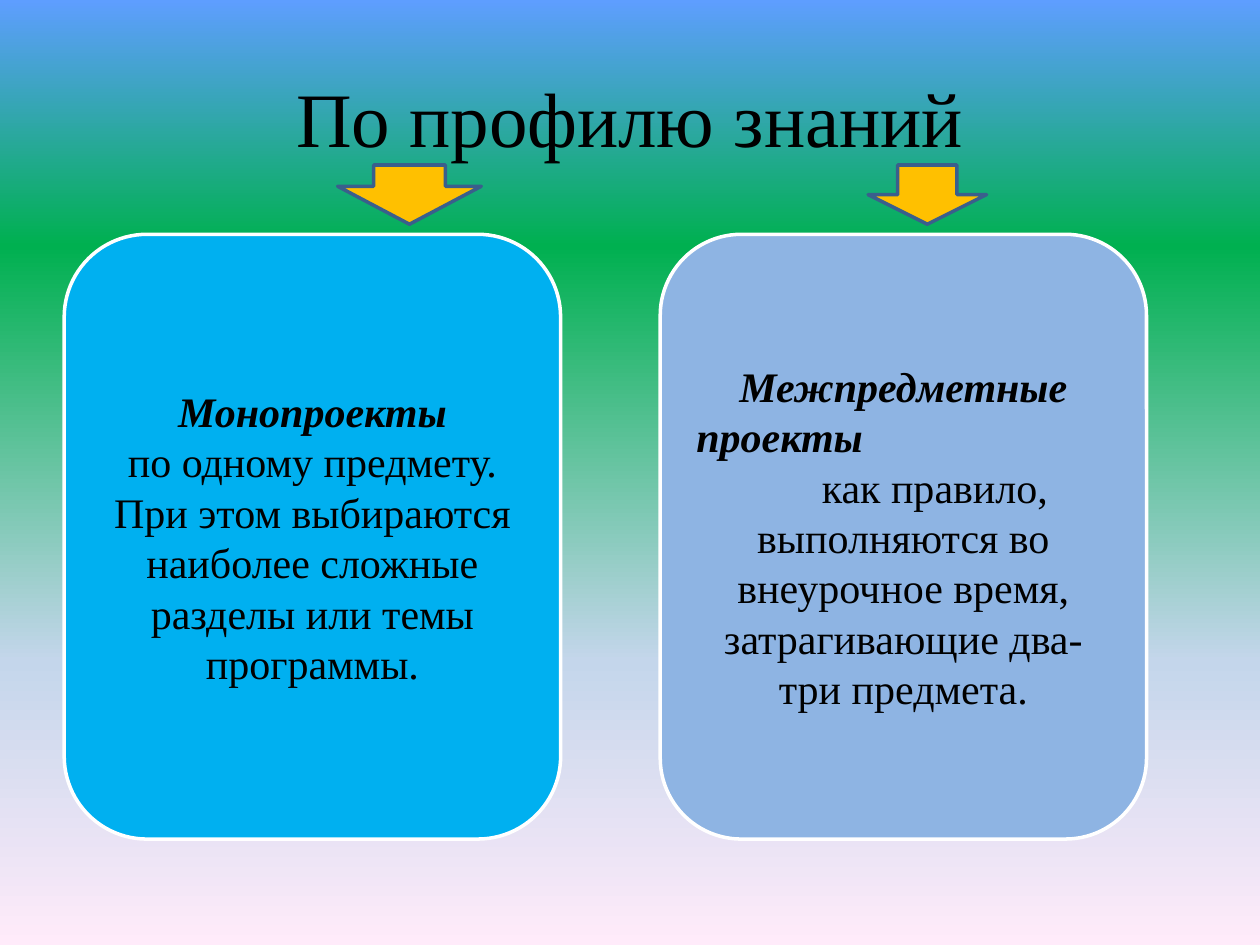
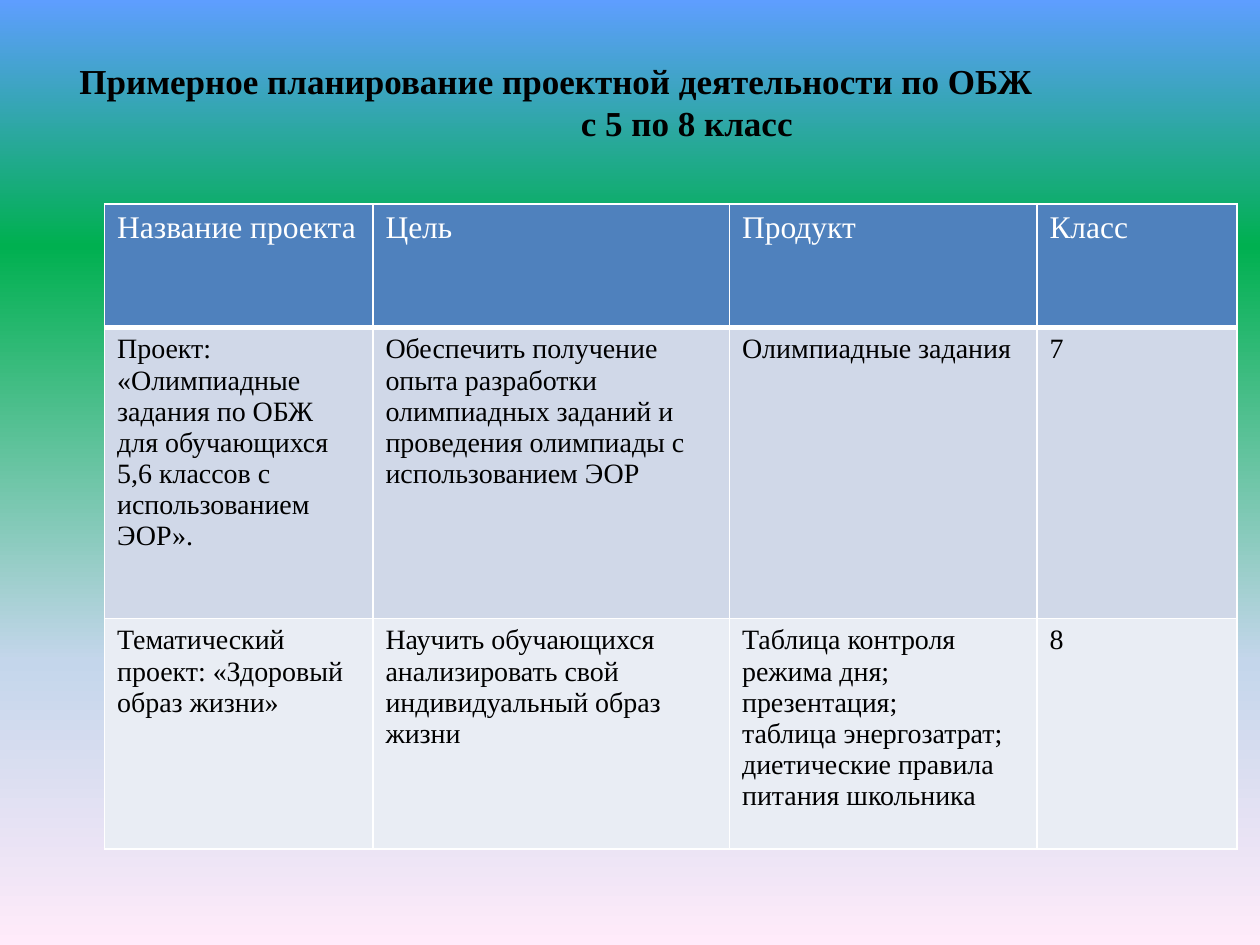
from dataclasses import dataclass

from lxml import etree
from pptx import Presentation
from pptx.dml.color import RGBColor
from pptx.enum.shapes import MSO_SHAPE
from pptx.enum.text import MSO_ANCHOR, PP_ALIGN
from pptx.oxml.ns import qn
from pptx.util import Inches, Pt

ROUND_RECT, DOWN_ARROW = MSO_SHAPE.ROUNDED_RECTANGLE, MSO_SHAPE.DOWN_ARROW
LEFT, CENTER = PP_ALIGN.LEFT, PP_ALIGN.CENTER
MIDDLE = MSO_ANCHOR.MIDDLE

# Shared look
FONT = "Times New Roman"
BLACK, WHITE = "000000", "FFFFFF"
ARROW_FILL, ARROW_LINE = "FFC000", "3A5F8C"
BACKDROP = [(0, "5E9EFF"), (26, "00B050"), (70, "C4D6EB"), (100, "FFEBFA")]
HEADER_FILL, ROW_FILLS = "4F81BD", ("D0D8E8", "E9EDF4")

# The slide is a grid of 100 columns by 75 rows
SLIDE_W, SLIDE_H = Inches(10), Inches(7.5)
COL, ROW = SLIDE_W / 100, SLIDE_H / 75


@dataclass
class Box:
    left: float
    top: float
    width: float
    height: float

    def emu(self) -> tuple:
        return (round(self.left * COL), round(self.top * ROW),
                round(self.width * COL), round(self.height * ROW))


@dataclass
class Para:
    text: str
    align: int = CENTER
    strong: bool = False
    margin: float = 0  # whole paragraph, in columns
    indent: float = 0  # first line, in columns


@dataclass
class Card:
    box: Box
    fill: str
    paras: list
    arrow: Box
    head: float


CARD_TOP, CARD_H = 18.6, 48
ARROW_TOP, ARROW_H = 13.1, 4.7

CARDS = [
    Card(Box(5.1, CARD_TOP, 39.4, CARD_H), "00B0F0",
         [Para("Монопроекты", strong=True),
          Para("по одному предмету. При этом выбираются наиболее сложные "
               "разделы или темы программы.")],
         Box(26.8, ARROW_TOP, 11.4, ARROW_H), 0.64),
    Card(Box(52.4, CARD_TOP, 38.6, CARD_H), "8EB4E3",
         [Para("Межпредметные", strong=True),
          Para("проекты", LEFT, strong=True),
          Para("как правило, выполняются во внеурочное время, "
               "затрагивающие два- три предмета.", indent=5)],
         Box(68.9, ARROW_TOP, 9.4, ARROW_H), 0.5),
]

TABLE_BOX = Box(8.3, 16.2, 89.9, 51.2)
COL_WIDTHS = (21.3, 28.3, 24.4, 15.9)
ROW_HEIGHTS = (9.8, 23.1, 18.3)
PLAN = [
    ("Название проекта", "Цель", "Продукт", "Класс"),
    ("Проект:\n«Олимпиадные задания по ОБЖ для обучающихся 5,6 классов "
     "с использованием ЭОР».",
     "Обеспечить получение опыта разработки олимпиадных заданий и "
     "проведения олимпиады с использованием ЭОР",
     "Олимпиадные задания", "7"),
    ("Тематический проект: «Здоровый образ жизни»",
     "Научить обучающихся анализировать свой индивидуальный образ жизни",
     "Таблица контроля режима дня; презентация;\n"
     "таблица энергозатрат; диетические правила питания школьника", "8"),
]


def rgb(color: str) -> RGBColor:
    return RGBColor.from_string(color)


def style_runs(p, size: float, color: str, bold=False, italic=False) -> None:
    for r in p.runs:
        r.font.name, r.font.size = FONT, Pt(size)
        r.font.bold, r.font.italic = bold, italic
        r.font.color.rgb = rgb(color)


def write(tf, paras: list, size: float, italic: bool = True) -> None:
    """Fill a frame with paragraphs; strong ones are bold."""
    tf.word_wrap, tf.vertical_anchor = True, MIDDLE
    tf.text = "\n".join(para.text for para in paras)
    for p, para in zip(tf.paragraphs, paras):
        p.alignment = para.align
        pPr = p._p.get_or_add_pPr()
        pPr.set("marL", str(round(para.margin * COL)))
        pPr.set("indent", str(round(para.indent * COL)))
        style_runs(p, size, BLACK, para.strong, para.strong and italic)


def set_backdrop(master) -> None:
    fill = master.background.fill
    fill.gradient()
    fill.gradient_angle = 270
    stops = next(master._element.iter(qn("a:gsLst")))
    for gs in list(stops):
        stops.remove(gs)
    for percent, color in BACKDROP:
        gs = etree.SubElement(stops, qn("a:gs"), pos=str(percent * 1000))
        etree.SubElement(gs, qn("a:srgbClr"), val=color)


def add_slide(prs, title: list, box: Box, size: float):
    s = prs.slides.add_slide(prs.slide_layouts.get_by_name("Title Only"))
    sp = s.shapes.title
    sp.left, sp.top, sp.width, sp.height = box.emu()
    write(sp.text_frame, title, size, italic=False)
    return s


def add_shape(s, kind: int, box: Box, fill: str, line: str):
    sp = s.shapes.add_shape(kind, *box.emu())
    sp.shadow.inherit = False
    sp.fill.solid()
    sp.fill.fore_color.rgb = rgb(fill)
    sp.line.color.rgb = rgb(line)
    sp.line.width = Pt(2)
    return sp


def add_card(s, card: Card) -> None:
    sp = add_shape(s, ROUND_RECT, card.box, card.fill, WHITE)
    write(sp.text_frame, card.paras, 24)
    arrow = add_shape(s, DOWN_ARROW, card.arrow, ARROW_FILL, ARROW_LINE)
    arrow.adjustments[1] = card.head


def set_borders(cell, top: float, bottom: float) -> None:
    tcPr = cell._tc.get_or_add_tcPr()
    for side, width in (("L", 1), ("R", 1), ("T", top), ("B", bottom)):
        ln = etree.SubElement(tcPr, qn(f"a:ln{side}"), w=str(Pt(width)))
        fill = etree.SubElement(ln, qn("a:solidFill"))
        etree.SubElement(fill, qn("a:srgbClr"), val=WHITE)


def add_plan(s) -> None:
    table = s.shapes.add_table(len(PLAN), len(PLAN[0]), *TABLE_BOX.emu()).table
    for column, width in zip(table.columns, COL_WIDTHS):
        column.width = round(width * COL)
    for i, (row, height) in enumerate(zip(table.rows, ROW_HEIGHTS)):
        row.height = round(height * ROW)
        header = i == 0
        for cell, text in zip(row.cells, PLAN[i]):
            set_borders(cell, 3 if i == 1 else 1, 3 if header else 1)
            cell.fill.solid()
            cell.fill.fore_color.rgb = rgb(HEADER_FILL if header else ROW_FILLS[i - 1])
            cell.text_frame.text = text
            for p in cell.text_frame.paragraphs:
                style_runs(p, 18 if header else 16, WHITE if header else BLACK)


def main() -> None:
    prs = Presentation()
    prs.slide_width, prs.slide_height = SLIDE_W, SLIDE_H
    set_backdrop(prs.slide_master)

    # Slide 1: two kinds of project
    s = add_slide(prs, [Para("По профилю знаний")], Box(5, 3, 90, 12.5), 44)
    for card in CARDS:
        add_card(s, card)

    # Slide 2: project plan
    title = [Para("Примерное планирование проектной деятельности по ОБЖ",
                  LEFT, strong=True, margin=0.3),
             Para("с 5 по 8 класс", LEFT, strong=True, margin=40.1)]
    add_plan(add_slide(prs, title, Box(5, 3, 90, 10.1), 20))

    prs.save("out.pptx")


if __name__ == "__main__":
    main()
